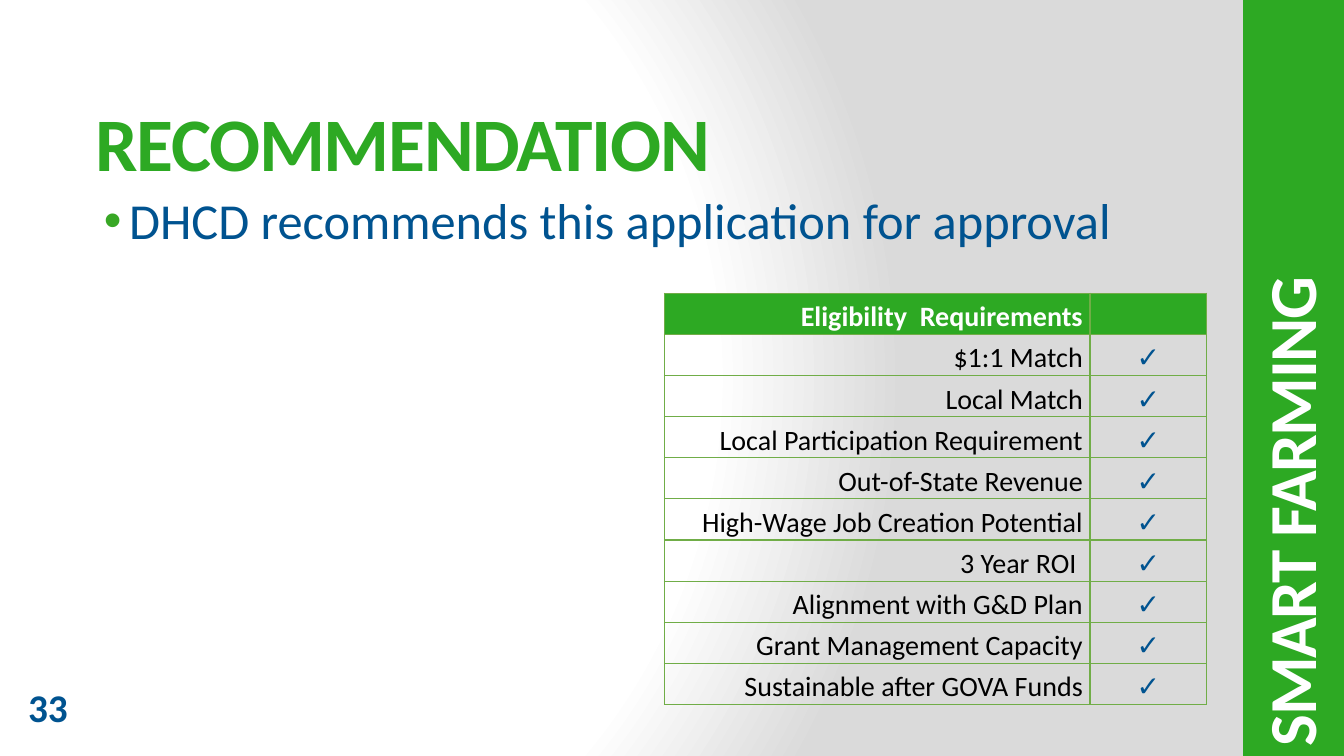
from dataclasses import dataclass

from lxml import etree
from pptx import Presentation
from pptx.dml.color import RGBColor
from pptx.enum.shapes import MSO_SHAPE
from pptx.enum.text import MSO_ANCHOR, MSO_AUTO_SIZE, PP_ALIGN
from pptx.oxml import parse_xml
from pptx.oxml.ns import nsdecls, qn
from pptx.util import Inches, Pt

RECTANGLE = MSO_SHAPE.RECTANGLE
MIDDLE, TOP, BOTTOM = MSO_ANCHOR.MIDDLE, MSO_ANCHOR.TOP, MSO_ANCHOR.BOTTOM
LEFT, CENTER, RIGHT = PP_ALIGN.LEFT, PP_ALIGN.CENTER, PP_ALIGN.RIGHT
NO_AUTOFIT = MSO_AUTO_SIZE.NONE


@dataclass(frozen=True)
class Theme:
    font: str = "Calibri"
    green: str = "2DA923"
    bullet: str = "38A725"
    border: str = "70AD47"
    blue: str = "005390"
    black: str = "000000"
    white: str = "FFFFFF"
    grey: str = "DADADA"
    title: int = 54
    banner: int = 48
    body: int = 36
    number: int = 28
    table: int = 20


THEME = Theme()


def write(frame, text, size, color, bold=False, align=LEFT, anchor=TOP, tracking=None):
    """Fill a one-paragraph text frame and format its run."""
    frame.text = text
    frame.word_wrap = True
    frame.auto_size = NO_AUTOFIT
    frame.vertical_anchor = anchor
    paragraph = frame.paragraphs[0]
    paragraph.alignment = align
    paragraph.space_before = Pt(0)
    run = paragraph.runs[0]
    run.font.name = THEME.font
    run.font.size = Pt(size)
    run.font.bold = bold
    run.font.color.rgb = RGBColor.from_string(color)
    if tracking is not None:
        run.font._element.set("spc", str(tracking * 100))
    return paragraph


def place(shape, left, top, width, height):
    shape.left, shape.top = Inches(left), Inches(top)
    shape.width, shape.height = Inches(width), Inches(height)


prs = Presentation()
prs.slide_width = Inches(13.33)
prs.slide_height = Inches(7.5)
slide = prs.slides.add_slide(prs.slide_layouts[1])

# Background: radial fade from white to grey
slide.background.fill.gradient()
fade = next(slide.element.iter(qn("a:gradFill")))
stops = "".join(
    f'<a:gs pos="{position * 1000}"><a:srgbClr val="{color}"/></a:gs>'
    for position, color in ((0, THEME.white), (75, THEME.white), (100, THEME.grey))
)
fade.getparent().replace(fade, parse_xml(
    f'<a:gradFill {nsdecls("a")} rotWithShape="1"><a:gsLst>{stops}</a:gsLst>'
    '<a:path path="circle"><a:fillToRect l="20000" t="50000" r="100000" b="50000"/>'
    "</a:path></a:gradFill>"
))

# Green side band with the project name running upwards
band = slide.shapes.add_shape(RECTANGLE, Inches(12.33), 0, Inches(1), Inches(7.5))
band.shadow.inherit = False
band.fill.solid()
band.fill.fore_color.rgb = RGBColor.from_string(THEME.green)
band.line.fill.background()

project = slide.shapes.add_textbox(Inches(8.85), Inches(3.02), Inches(7.88), Inches(1.08))
project.rotation = 270
write(project.text_frame, "SMART FARMING", THEME.banner, THEME.white, True,
      anchor=MIDDLE, tracking=-1)

# Slide number
number = slide.shapes.add_textbox(Inches(0.18), Inches(6.73), Inches(1.06), Inches(0.57))
write(number.text_frame, "33", THEME.number, THEME.blue, True)

# Title
heading = slide.shapes.title
place(heading, 0.85, 0.86, 11.49, 1.08)
write(heading.text_frame, "RECOMMENDATION", THEME.title, THEME.green, True,
      anchor=MIDDLE, tracking=-1)

# Recommendation bullet
recommendation = slide.placeholders[1]
place(recommendation, 0.8, 1.83, 11.36, 5.09)
advice = write(recommendation.text_frame, "DHCD recommends this application for approval",
               THEME.body, THEME.blue)
advice_props = advice._p.get_or_add_pPr()
advice_props.set("marL", str(Inches(0.38)))
advice_props.set("indent", str(Inches(-0.25)))
bullet_color = etree.SubElement(advice_props, qn("a:buClr"))
etree.SubElement(bullet_color, qn("a:srgbClr"), val=THEME.bullet)
etree.SubElement(advice_props, qn("a:buFont"), typeface="Arial")
etree.SubElement(advice_props, qn("a:buChar"), char="•")

# Eligibility table
requirements = [
    "Eligibility  Requirements",
    "$1:1 Match",
    "Local Match",
    "Local Participation Requirement",
    "Out-of-State Revenue",
    "High-Wage Job Creation Potential",
    "3 Year ROI ",
    "Alignment with G&D Plan",
    "Grant Management Capacity",
    "Sustainable after GOVA Funds",
]
single_spaced = {"Local Participation Requirement", "Out-of-State Revenue"}

eligibility = slide.shapes.add_table(
    len(requirements), 2, Inches(6.59), Inches(2.91), Inches(5.38), Inches(4.08)
).table
eligibility.first_row = False
eligibility.horz_banding = False
eligibility.columns[0].width = Inches(4.22)
eligibility.columns[1].width = Inches(1.16)

for row, requirement in enumerate(requirements):
    is_header = row == 0
    entries = (
        (requirement, THEME.white if is_header else THEME.black, is_header, RIGHT),
        ("" if is_header else "✓", THEME.blue, True, CENTER),
    )
    for column, (text, color, bold, align) in enumerate(entries):
        cell = eligibility.cell(row, column)
        cell.margin_left = cell.margin_right = Inches(0.07)
        cell.margin_top = cell.margin_bottom = 0
        cell.vertical_anchor = BOTTOM
        for side in ("lnL", "lnR", "lnT", "lnB"):
            cell._tc.get_or_add_tcPr().append(parse_xml(
                f'<a:{side} {nsdecls("a")} w="{Pt(1)}"><a:solidFill>'
                f'<a:srgbClr val="{THEME.border}"/></a:solidFill></a:{side}>'
            ))
        if is_header:
            cell.fill.solid()
            cell.fill.fore_color.rgb = RGBColor.from_string(THEME.green)
        else:
            cell.fill.background()
        if text:
            cell.text_frame.text = text
            line = cell.text_frame.paragraphs[0]
            line.alignment = align
            line.line_spacing = 1.0 if text in single_spaced else 1.15
            font = line.runs[0].font
            font.name = THEME.font
            font.size = Pt(THEME.table)
            font.bold = bold
            font.color.rgb = RGBColor.from_string(color)

prs.save("out.pptx")
